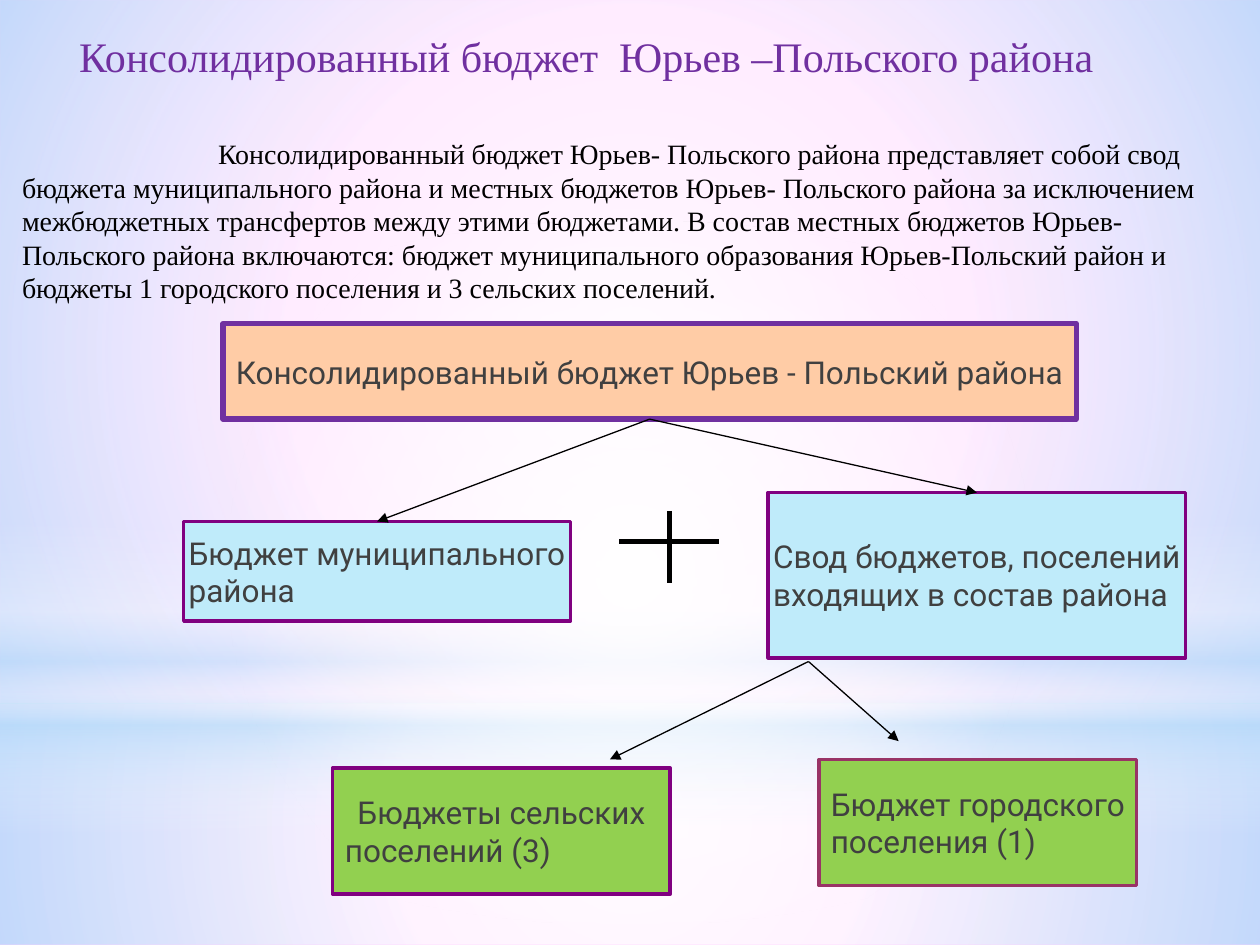
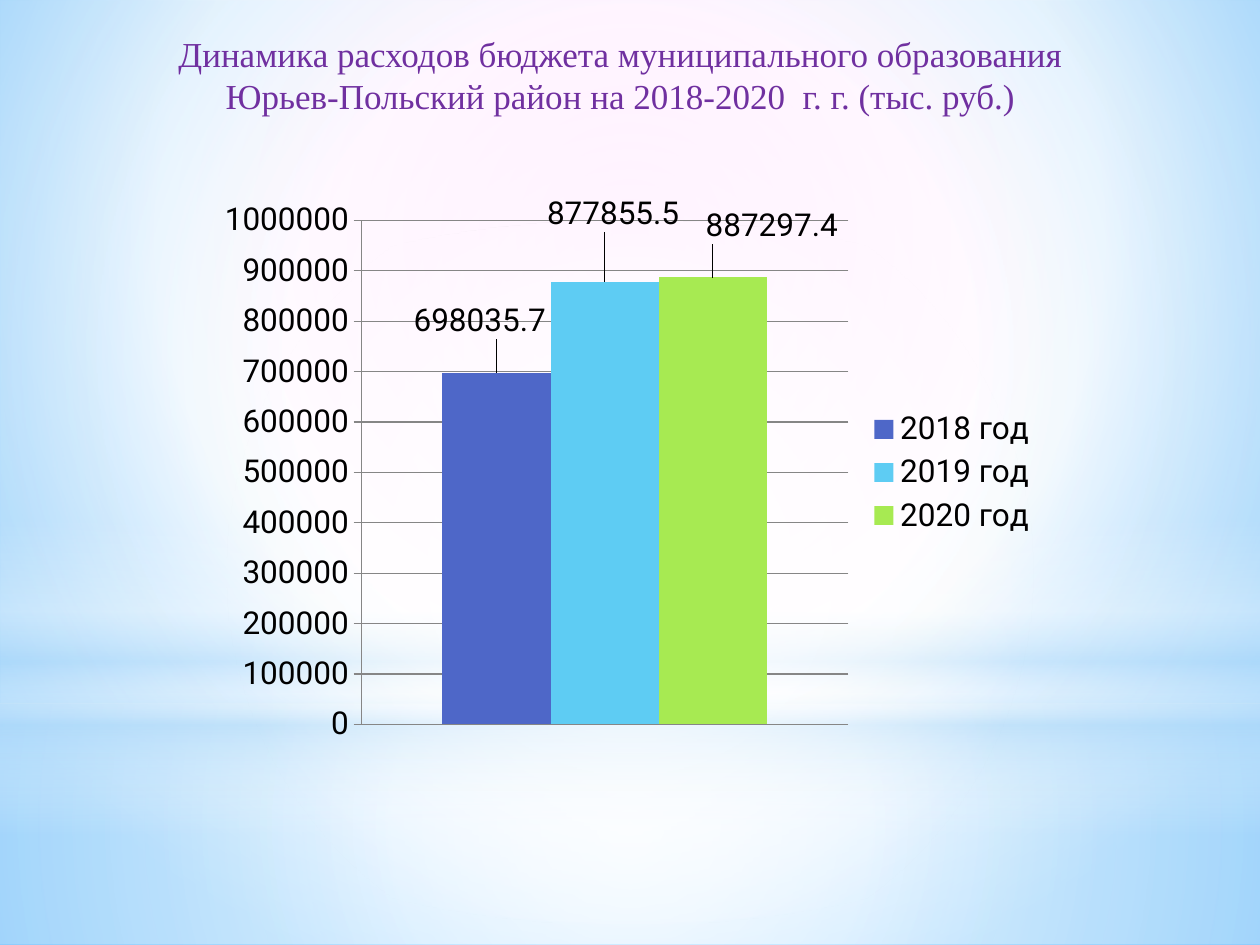
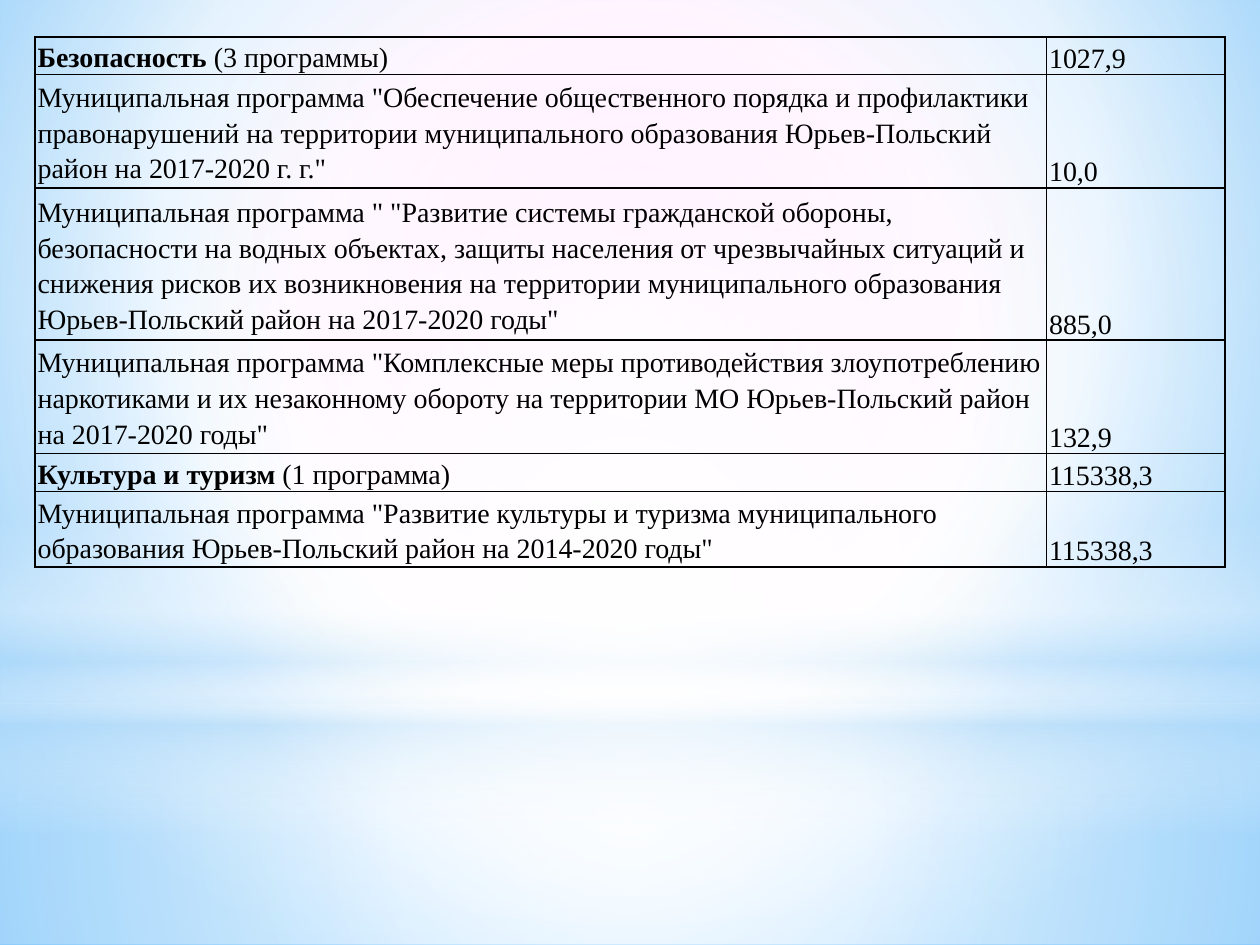
from lxml.etree import SubElement
from pptx import Presentation
from pptx.chart.data import CategoryChartData
from pptx.dml.color import RGBColor
from pptx.enum.chart import XL_CHART_TYPE, XL_LABEL_POSITION, XL_LEGEND_POSITION, XL_TICK_MARK
from pptx.enum.shapes import MSO_CONNECTOR, MSO_SHAPE
from pptx.enum.text import MSO_ANCHOR, MSO_AUTO_SIZE, PP_ALIGN
from pptx.oxml import parse_xml
from pptx.oxml.ns import nsdecls, qn
from pptx.util import Pt

SERIF, SANS = "Times New Roman", "Roboto"
BLACK, GREY, DARK = "000000", "868686", "404040"
VIOLET, PLUM, WINE = "7030A0", "800080", "993366"
PEACH, SKY, LIME, PINK = "FFCCA6", "BFEBFA", "92D050", "FFCCFF"
WHITE, HAZE = "FFFFFF", "B4DCFA"

MID = (50, 50, 50, 50)
BACK = ([(0, PINK, 100), (60, WHITE, 100), (100, "5BB9FF", 100)], (20, 10, 20, 60))
BANDS = [
    (MSO_SHAPE.RECTANGLE, (0, 402, 720, 138),
     [(0, WHITE, 91), (37, WHITE, 76), (100, HAZE, 79)], MID),
    (MSO_SHAPE.RECTANGLE, (0, 0, 720, 402),
     [(0, WHITE, 89), (48, WHITE, 62), (100, HAZE, 79)], MID),
    (MSO_SHAPE.RECTANGLE, (0, 297, 720, 180),
     [(0, WHITE, 0), (29, WHITE, 30), (45, HAZE, 40), (55, WHITE, 26),
      (65, HAZE, 60), (100, WHITE, 0)], None),
    (MSO_SHAPE.OVAL, (0, 126, 720, 402), [(0, WHITE, 100), (56, WHITE, 0)], MID),
]

HEAD = ["Консолидированный бюджет  Юрьев –Польского района"]
INTRO = (
    "Консолидированный бюджет Юрьев- Польского района представляет собой свод "
    "бюджета муниципального района и местных бюджетов Юрьев- Польского района за "
    "исключением межбюджетных трансфертов между этими бюджетами. В состав местных "
    "бюджетов Юрьев- Польского района включаются: бюджет муниципального образования "
    "Юрьев-Польский район и бюджеты 1 городского поселения и 3 сельских поселений."
)
BOXES = {
    "total": ((127.5, 185, 487.5, 54.5), PEACH, VIOLET, 3,
              ["Консолидированный бюджет Юрьев - Польский района"]),
    "county": ((105, 298, 221, 57), SKY, PLUM, 2, ["Бюджет муниципального", "района"]),
    "towns": ((439, 281.5, 238.5, 94.5), SKY, PLUM, 2,
              ["Свод бюджетов, поселений", "входящих в состав района"]),
    "rural": ((190, 439, 193, 72), LIME, PLUM, 2, ["Бюджеты сельских", "поселений (3)"]),
    "urban": ((468, 434, 181.5, 72), LIME, WINE, 2, ["Бюджет городского", "поселения (1)"]),
}
LINKS = [("total", "towns"), ("total", "county")]
ARROWS = [(462, 378, 348.5, 434), (462, 378, 513.5, 423.5)]
PLUS = [(354, 309.5, 411, 309.5), (382.5, 292, 382.5, 333)]

TREND = ["Динамика расходов бюджета муниципального образования",
         "Юрьев-Польский район на 2018-2020  г. г. (тыс. руб.)"]
YEARS = [
    ("2018 год", 698035.7, "4E67C8", (-0.02, -0.05)),
    ("2019 год", 877855.5, "5ECCF3", (0.01, -0.08)),
    ("2020 год", 887297.4, "A7EA52", (0.07, -0.05)),
]

COLS = (578, 102)
ROWS = [
    (21.6, ("Безопасность ", "(3 программы)"), "1027,9"),
    (64.8, 'Муниципальная программа "Обеспечение общественного порядка и профилактики '
     'правонарушений на территории муниципального образования Юрьев-Польский район '
     'на 2017-2020 г. г."', "10,0"),
    (87, 'Муниципальная программа " "Развитие системы гражданской обороны, безопасности '
     'на водных объектах, защиты населения от чрезвычайных ситуаций и снижения рисков '
     'их возникновения на территории муниципального образования Юрьев-Польский район '
     'на 2017-2020 годы"', "885,0"),
    (64.8, 'Муниципальная программа "Комплексные меры противодействия злоупотреблению '
     'наркотиками и их незаконному обороту на территории МО Юрьев-Польский район '
     'на 2017-2020 годы"', "132,9"),
    (21.6, ("Культура и туризм ", "(1 программа)"), "115338,3"),
    (43.2, 'Муниципальная программа "Развитие культуры и туризма муниципального '
     'образования Юрьев-Польский район на 2014-2020 годы"', "115338,3"),
]


def hue(code):
    return RGBColor.from_string(code)


def pts(spot):
    return [Pt(v) for v in spot]


def apply(item, **looks):
    for name, value in looks.items():
        setattr(item, name, value)


def stroke(line, ink, width):
    line.color.rgb = hue(ink)
    line.width = Pt(width)


def blend(stops, focus):
    marks = "".join(
        f'<a:gs pos="{at * 1000}"><a:srgbClr val="{ink}">'
        f'<a:alpha val="{alpha * 1000}"/></a:srgbClr></a:gs>'
        for at, ink, alpha in stops)
    if focus:
        sides = " ".join(f'{side}="{v * 1000}"' for side, v in zip("ltrb", focus))
        form = f'<a:path path="circle"><a:fillToRect {sides}/></a:path>'
    else:
        form = '<a:lin ang="5400000" scaled="0"/>'
    return parse_xml(f'<a:gradFill {nsdecls("a")} rotWithShape="1">'
                     f'<a:gsLst>{marks}</a:gsLst>{form}</a:gradFill>')


def write(frame, lines, face, size, ink, **looks):
    for i, line in enumerate(lines):
        para = frame.paragraphs[0] if i == 0 else frame.add_paragraph()
        apply(para, **looks)
        parts = line if isinstance(line, tuple) else ("", line)
        for bold, text in zip((True, False), parts):
            if text:
                run = para.add_run()
                run.text = text
                apply(run.font, name=face, size=Pt(size), bold=bold)
                run.font.color.rgb = hue(ink)


def title(slide, spot, lines, size, anchor):
    head = slide.shapes.title
    apply(head, **dict(zip(("left", "top", "width", "height"), pts(spot))))
    apply(head.text_frame, word_wrap=True, auto_size=MSO_AUTO_SIZE.NONE,
          vertical_anchor=anchor)
    write(head.text_frame, lines, SERIF, size, VIOLET, align=PP_ALIGN.CENTER)


def dress(master, slide):
    master.background.fill.solid()
    base = master.element.find(".//" + qn("p:bgPr"))
    base.replace(base[0], blend(*BACK))
    for i, (kind, spot, stops, focus) in enumerate(BANDS):
        band = slide.shapes.add_shape(kind, *pts(spot))
        band.shadow.inherit = False
        band.element.spPr.insert(2, blend(stops, focus))
        band.line.fill.background()
        for tag in band.element.iter(qn("p:cNvPr")):
            tag.set("id", str(20 + i))
        master.shapes.element.insert(2 + i, band.element)


def draw(slide, ends, width, tip=False):
    line = slide.shapes.add_connector(MSO_CONNECTOR.STRAIGHT, *pts(ends))
    stroke(line.line, BLACK, width)
    shape = line.element.spPr
    if tip:
        SubElement(shape.find(qn("a:ln")), qn("a:tailEnd")).set("type", "triangle")
    SubElement(shape, qn("a:effectLst"))
    return line


def scheme(slide):
    slide.background.fill.solid()
    slide.background.fill.fore_color.rgb = hue(PINK)
    title(slide, (-25, 9.5, 720, 45), HEAD, 24, MSO_ANCHOR.MIDDLE)
    made = {}
    for name, (spot, fill, edge, width, lines) in BOXES.items():
        box = made[name] = slide.shapes.add_shape(MSO_SHAPE.RECTANGLE, *pts(spot))
        box.shadow.inherit = False
        box.fill.solid()
        box.fill.fore_color.rgb = hue(fill)
        stroke(box.line, edge, width)
        apply(box.text_frame, word_wrap=False, vertical_anchor=MSO_ANCHOR.MIDDLE)
        write(box.text_frame, lines, SANS, 18, DARK, align=PP_ALIGN.CENTER)
    for start, end in LINKS:
        link = draw(slide, (0, 0, 9, 9), 0.75, True)
        link.begin_connect(made[start], 2)
        link.end_connect(made[end], 0)
    for ends in ARROWS:
        draw(slide, ends, 0.75, True)
    for ends in PLUS:
        draw(slide, ends, 3)
    note = slide.shapes.add_textbox(*pts((5.5, 71.5, 686, 106.5))).text_frame
    apply(note, word_wrap=True, margin_top=Pt(6.5))
    write(note, [INTRO], SERIF, 16, BLACK)
    note.paragraphs[0]._p.get_or_add_pPr().set("indent", str(Pt(112)))


def place(node, index, **sizes):
    old = node.find(qn("c:layout"))
    if old is not None:
        node.remove(old)
    tags = "".join(f'<c:{k} val="{v}"/>' for k, v in sizes.items())
    node.insert(index, parse_xml(f'<c:layout {nsdecls("c")}><c:manualLayout>{tags}'
                                 '</c:manualLayout></c:layout>'))


def graph(slide):
    title(slide, (14.5, 15, 680, 55.5), TREND, 20, MSO_ANCHOR.TOP)
    data = CategoryChartData()
    data.categories = ["1"]
    for name, value, *_ in YEARS:
        data.add_series(name, [value])
    chart = slide.shapes.add_chart(
        XL_CHART_TYPE.COLUMN_CLUSTERED, *pts((120, 110, 480, 320)), data).chart
    apply(chart, has_title=False, has_legend=True)
    apply(chart.font, name=SANS, size=Pt(18))
    chart.font.color.rgb = hue(BLACK)
    apply(chart.legend, position=XL_LEGEND_POSITION.RIGHT, include_in_layout=False)
    chart.category_axis.visible = False
    axis = chart.value_axis
    apply(axis, minimum_scale=0, maximum_scale=1000000, major_unit=100000,
          has_major_gridlines=True, major_tick_mark=XL_TICK_MARK.OUTSIDE)
    for line in (axis.format.line, axis.major_gridlines.format.line):
        stroke(line, GREY, 0.75)
    plot = chart.plots[0]
    apply(plot, gap_width=150, overlap=0, vary_by_categories=False)
    for bar, (_, _, ink, (x, y)) in zip(plot.series, YEARS):
        bar.format.fill.solid()
        bar.format.fill.fore_color.rgb = hue(ink)
        bar.data_labels.show_value = True
        bar.points[0].data_label.position = XL_LABEL_POSITION.OUTSIDE_END
        place(bar._element.find(".//" + qn("c:dLbl")), 1, x=x, y=y)
    place(chart._chartSpace.find(".//" + qn("c:plotArea")), 0, layoutTarget="inner",
          xMode="edge", yMode="edge", x=0.18, y=0.05, w=0.58, h=0.9)


def rule(cell):
    props = cell._tc.get_or_add_tcPr()
    for side in "LRTB":
        props.append(parse_xml(
            f'<a:ln{side} {nsdecls("a")} w="{Pt(1)}"><a:solidFill>'
            f'<a:srgbClr val="{BLACK}"/></a:solidFill></a:ln{side}>'))
    cell.fill.background()


def grid(slide):
    high = sum(row[0] for row in ROWS)
    table = slide.shapes.add_table(
        len(ROWS), len(COLS), *pts((20, 21, sum(COLS), high))).table
    apply(table, first_row=False, horz_banding=False)
    for col, width in zip(table.columns, COLS):
        col.width = Pt(width)
    kinds = [(MSO_ANCHOR.MIDDLE, PP_ALIGN.LEFT), (MSO_ANCHOR.BOTTOM, PP_ALIGN.CENTER)]
    for row, (height, *texts) in zip(table.rows, ROWS):
        row.height = Pt(height)
        for cell, text, (anchor, align) in zip(row.cells, texts, kinds):
            apply(cell, vertical_anchor=anchor, margin_left=Pt(1.5),
                  margin_right=Pt(1.5), margin_top=0, margin_bottom=0)
            write(cell.text_frame, [text], SERIF, 16, BLACK,
                  align=align, line_spacing=1.15)
            rule(cell)


def main():
    deck = Presentation()
    apply(deck, slide_width=Pt(720), slide_height=Pt(540))
    pages = [deck.slides.add_slide(deck.slide_layouts[i]) for i in (5, 5, 6)]
    dress(deck.slide_master, pages[0])
    for build, page in zip((scheme, graph, grid), pages):
        build(page)
    deck.save("out.pptx")


if __name__ == "__main__":
    main()
